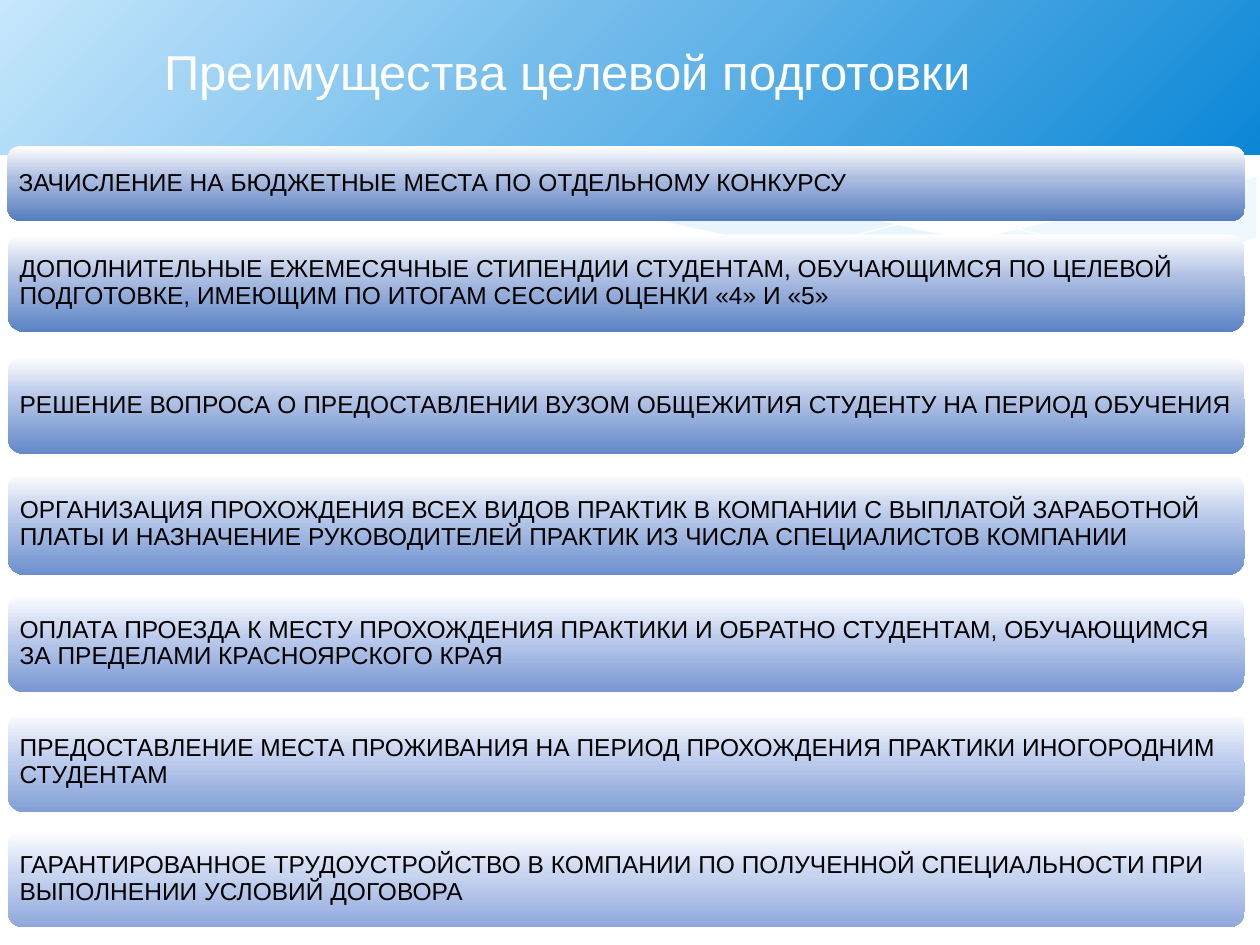
from lxml import etree
from pptx import Presentation
from pptx.dml.color import RGBColor
from pptx.enum.shapes import MSO_SHAPE
from pptx.enum.text import MSO_ANCHOR, PP_ALIGN
from pptx.oxml import parse_xml
from pptx.oxml.ns import nsdecls, qn
from pptx.util import Pt

RECTANGLE = MSO_SHAPE.RECTANGLE
ROUNDED = MSO_SHAPE.ROUNDED_RECTANGLE
MIDDLE = MSO_ANCHOR.MIDDLE
LEFT, CENTER = PP_ALIGN.LEFT, PP_ALIGN.CENTER

WHITE = RGBColor(0xFF, 0xFF, 0xFF)
BLACK = RGBColor(0x00, 0x00, 0x00)
PALE_BLUE = RGBColor(0xC6, 0xE7, 0xFC)
SKY_BLUE = RGBColor(0x69, 0xB7, 0xE9)
DEEP_BLUE = RGBColor(0x0B, 0x87, 0xD6)

FONT = "Arial"
SLIDE_WIDTH, SLIDE_HEIGHT = 720, 540
BAR_LEFT, BAR_WIDTH, BAR_INSET = 4.3, 707, 4.2

TITLE = "Преимущества целевой подготовки"

# top, height, middle colour, bottom colour, text
BENEFITS = [
    (83.5, 42.5, RGBColor(0xAB, 0xBC, 0xE0), RGBColor(0x55, 0x7D, 0xBF),
     "ЗАЧИСЛЕНИЕ НА БЮДЖЕТНЫЕ МЕСТА ПО ОТДЕЛЬНОМУ КОНКУРСУ"),
    (134, 55.5, RGBColor(0xAE, 0xBF, 0xE3), RGBColor(0x5B, 0x83, 0xC4),
     "ДОПОЛНИТЕЛЬНЫЕ ЕЖЕМЕСЯЧНЫЕ СТИПЕНДИИ СТУДЕНТАМ, ОБУЧАЮЩИМСЯ ПО ЦЕЛЕВОЙ "
     "ПОДГОТОВКЕ, ИМЕЮЩИМ ПО ИТОГАМ СЕССИИ ОЦЕНКИ «4» И «5»"),
    (203.8, 55.5, RGBColor(0xB2, 0xC3, 0xE6), RGBColor(0x64, 0x89, 0xC9),
     "РЕШЕНИЕ ВОПРОСА О ПРЕДОСТАВЛЕНИИ ВУЗОМ ОБЩЕЖИТИЯ СТУДЕНТУ НА ПЕРИОД ОБУЧЕНИЯ"),
    (270.5, 58, RGBColor(0xB6, 0xC7, 0xE9), RGBColor(0x6D, 0x90, 0xCD),
     "ОРГАНИЗАЦИЯ ПРОХОЖДЕНИЯ ВСЕХ ВИДОВ ПРАКТИК В КОМПАНИИ С ВЫПЛАТОЙ ЗАРАБОТНОЙ "
     "ПЛАТЫ И НАЗНАЧЕНИЕ РУКОВОДИТЕЛЕЙ ПРАКТИК ИЗ ЧИСЛА СПЕЦИАЛИСТОВ КОМПАНИИ"),
    (340, 55.5, RGBColor(0xBC, 0xCB, 0xEC), RGBColor(0x77, 0x97, 0xD2),
     "ОПЛАТА ПРОЕЗДА К МЕСТУ ПРОХОЖДЕНИЯ ПРАКТИКИ И ОБРАТНО СТУДЕНТАМ, ОБУЧАЮЩИМСЯ "
     "ЗА ПРЕДЕЛАМИ КРАСНОЯРСКОГО КРАЯ"),
    (407, 57, RGBColor(0xC2, 0xD0, 0xEF), RGBColor(0x82, 0x9F, 0xD6),
     "ПРЕДОСТАВЛЕНИЕ МЕСТА ПРОЖИВАНИЯ НА ПЕРИОД ПРОХОЖДЕНИЯ ПРАКТИКИ ИНОГОРОДНИМ "
     "СТУДЕНТАМ"),
    (474.5, 55.5, RGBColor(0xC9, 0xD6, 0xF1), RGBColor(0x8E, 0xA7, 0xDB),
     "ГАРАНТИРОВАННОЕ ТРУДОУСТРОЙСТВО В КОМПАНИИ ПО ПОЛУЧЕННОЙ СПЕЦИАЛЬНОСТИ ПРИ "
     "ВЫПОЛНЕНИИ УСЛОВИЙ ДОГОВОРА"),
]

RIGHT_WAVE = [
    (717, 101.5), (688, 107), (657, 113.8), (635, 118.8), (595, 128), (557, 136.8),
    (523, 143.3), (491, 149), (523, 153.4), (560, 156.2), (593, 157.7), (630, 157),
    (661, 154), (690, 147.6), (717.8, 136), (717.8, 101.5)]
LEFT_WAVE = [
    (658, 154), (618, 149), (573, 141), (523, 131), (468, 117.4), (436, 110),
    (405, 103.7), (376, 99.4), (333, 94.3), (289, 91.4), (251, 92.8), (221, 95.8),
    (261, 101.5), (306, 110.2), (338, 117.4), (397, 131), (448, 142), (483, 148.3),
    (515, 153), (545, 156.2), (580, 158.4), (611, 158.4), (639, 157)]
FALLING_CURVE = [
    (238, 98.6), (262, 95), (294, 92.9), (327, 92.9), (367, 95), (415, 99.4),
    (453, 104.4), (494, 111.6), (539, 121), (588, 132.5), (640, 145.4), (668, 153.4)]
RISING_CURVE = [
    (456.5, 142.6), (485, 135.4), (516, 127.4), (554, 118.8), (595, 109.4),
    (639, 100.8), (670, 96.5), (700, 92.9), (717, 91.4)]
WHITE_WAVE = [
    (718.6, 135.4), (685, 146.9), (645, 154.1), (608, 157), (575, 157), (538, 154.1),
    (496, 149), (449, 141), (396, 130.3), (337, 116.6), (278, 103.7), (225, 95),
    (181, 91.4), (142, 90), (110, 91.4), (83, 94.3), (58, 100), (41, 107),
    (31.7, 111.6), (31.7, 195), (718.6, 195)]

# points, fill colour (None for an open curve), opacity in percent
WAVES = [
    (RIGHT_WAVE, PALE_BLUE, 29),
    (LEFT_WAVE, PALE_BLUE, 40),
    (FALLING_CURVE, None, 100),
    (RISING_CURVE, None, 100),
    (WHITE_WAVE, WHITE, 100),
]

LINEAR_DOWN = '<a:lin ang="5400000" scaled="0"/>'
FROM_BOTTOM_RIGHT = '<a:path path="circle"><a:fillToRect l="100000" t="100000"/></a:path>'


def add_wave(slide, points, color, opacity):
    corners = [(Pt(x), Pt(y)) for x, y in points]
    builder = slide.shapes.build_freeform(*corners[0])
    builder.add_line_segments(corners[1:], close=color is not None)
    shape = builder.convert_to_shape()
    shape.shadow.inherit = False
    if color is None:
        shape.fill.background()
        shape.line.color.rgb = WHITE
        shape.line.width = Pt(0)
        return
    shape.line.fill.background()
    shape.fill.solid()
    shape.fill.fore_color.rgb = color
    if opacity < 100:
        color_element = shape.fill._xPr.find(".//" + qn("a:srgbClr"))
        etree.SubElement(color_element, qn("a:alpha"), val=str(opacity * 1000))


def add_gradient_shape(slide, kind, left, top, width, height, stops, direction):
    shape = slide.shapes.add_shape(kind, Pt(left), Pt(top), Pt(width), Pt(height))
    shape.shadow.inherit = False
    shape.line.fill.background()
    shape.fill.background()
    stop_xml = "".join(
        f'<a:gs pos="{position * 1000}"><a:srgbClr val="{color}"/></a:gs>'
        for position, color in stops)
    gradient = parse_xml(
        f'<a:gradFill {nsdecls("a")} rotWithShape="1">'
        f"<a:gsLst>{stop_xml}</a:gsLst>{direction}</a:gradFill>")
    properties = shape.fill._xPr
    properties.replace(properties.find(qn("a:noFill")), gradient)
    return shape


def set_text(shape, text, *, size, color, align=LEFT, inset=0, line_spacing=1.0):
    frame = shape.text_frame
    frame.word_wrap = True
    frame.vertical_anchor = MIDDLE
    frame.margin_left = frame.margin_right = Pt(inset)
    frame.margin_top = frame.margin_bottom = Pt(inset)
    paragraph = frame.paragraphs[0]
    paragraph.alignment = align
    paragraph.line_spacing = line_spacing
    run = paragraph.add_run()
    run.text = text
    run.font.name = FONT
    run.font.size = Pt(size)
    run.font.color.rgb = color


def main():
    presentation = Presentation()
    presentation.slide_width = Pt(SLIDE_WIDTH)
    presentation.slide_height = Pt(SLIDE_HEIGHT)
    slide = presentation.slides.add_slide(presentation.slide_layouts[6])

    for points, color, opacity in WAVES:
        add_wave(slide, points, color, opacity)

    add_gradient_shape(
        slide, RECTANGLE, 0, 0, SLIDE_WIDTH, 88.5,
        [(0, DEEP_BLUE), (50, SKY_BLUE), (100, PALE_BLUE)], FROM_BOTTOM_RIGHT)
    title = slide.shapes.add_textbox(Pt(16.5), Pt(15), Pt(615.5), Pt(51))
    set_text(title, TITLE, size=28, color=WHITE, align=CENTER)

    for top, height, middle_color, bottom_color, text in BENEFITS:
        bar = add_gradient_shape(
            slide, ROUNDED, BAR_LEFT, top, BAR_WIDTH, height,
            [(0, WHITE), (44, middle_color), (100, bottom_color)], LINEAR_DOWN)
        set_text(bar, text, size=14, color=BLACK, inset=BAR_INSET, line_spacing=0.9)

    presentation.save("out.pptx")


if __name__ == "__main__":
    main()
